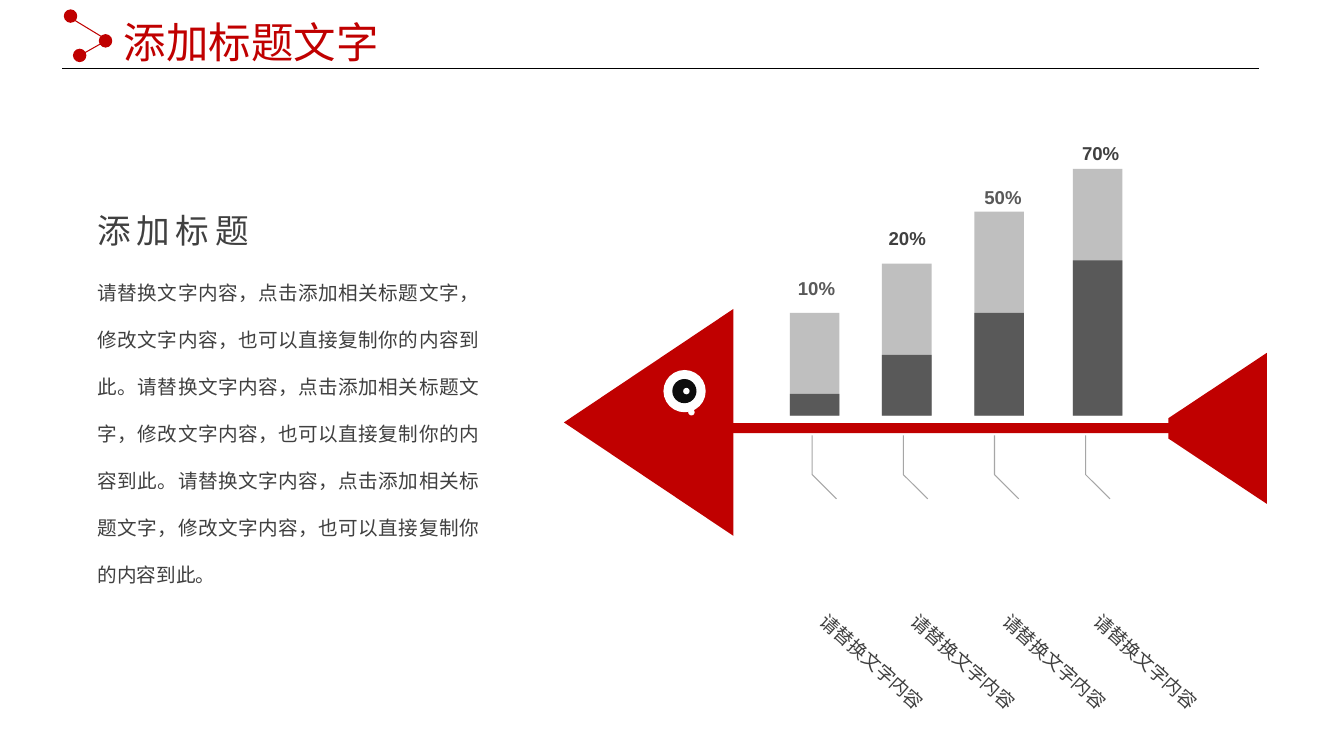
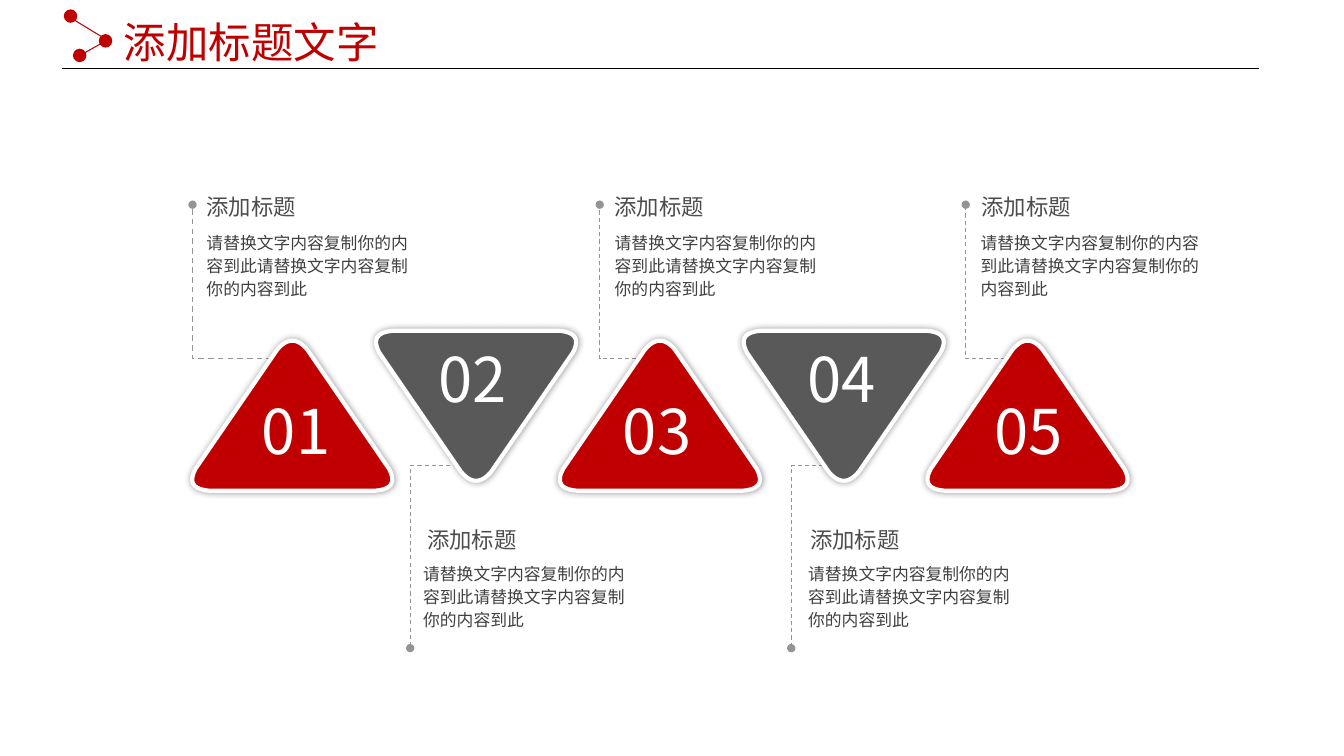
from dataclasses import dataclass

from lxml import etree
from pptx import Presentation
from pptx.dml.color import RGBColor
from pptx.enum.dml import MSO_LINE
from pptx.enum.shapes import MSO_CONNECTOR, MSO_SHAPE as SHAPE
from pptx.enum.text import MSO_AUTO_SIZE as AUTO, PP_ALIGN as ALIGN
from pptx.oxml.ns import qn
from pptx.util import Pt

CJK, LATIN = "Noto Sans CJK SC", "Arial"
RED, WHITE, BLACK = "C00000", "FFFFFF", "000000"
DARK, TEXT, HEADING = "595959", "404040", "4D4D4D"
LIGHT, LEADER, DASH, PUPIL = "BFBFBF", "A6A6A6", "949494", "0D0D0D"
HEADING_TEXT = "添加标题"
SENTENCE = "请替换文字内容，点击添加相关标题文字，修改文字内容，也可以直接复制你的内容到此。"
STEP_TEXT = "请替换文字内容复制你的内容到此" * 2
Point = tuple[float, float]


@dataclass(frozen=True)
class Style:
    size: float
    color: str = TEXT
    font: str = CJK
    bold: bool = False
    align: ALIGN = ALIGN.LEFT
    leading: float = 1.0
    tracking: float = 0
    wrap: bool = True


TITLE = Style(30.3, RED, leading=1.2)
BIG_HEADING = Style(24, tracking=4)
BODY = Style(14, align=ALIGN.JUSTIFY, leading=2)
BONE_LABEL = Style(13.3, align=ALIGN.CENTER, leading=1.2)
STEP_HEADING = Style(16, HEADING, wrap=False)
STEP_BODY = Style(12, leading=1.14)
NUMBER = Style(44, WHITE, wrap=False)


@dataclass(frozen=True)
class Bar:
    left: float
    top: float
    split: float
    label: str
    label_left: float
    label_top: float
    label_color: str


BARS = [
    Bar(564.2, 223.6, 281.3, "10%", 556.6, 190.8, DARK),
    Bar(630, 188.3, 253.5, "20%", 621.4, 155.5, TEXT),
    Bar(696, 151.2, 223.5, "50%", 689.8, 126, DARK),
    Bar(766.4, 120.7, 186, "70%", 759.6, 94.3, TEXT),
]
BAR_WIDTH, BAR_BOTTOM = 35.4, 296.9


@dataclass(frozen=True)
class Row:
    """Vertical places shared by the steps that point the same way."""
    color: str
    apex: float
    base: float
    number: float
    bend: float
    dot: float
    heading: float
    body: float


UP = Row(RED, 241.2, 350.6, 277.2, 256.3, 146.2, 134.6, 160.6)
DOWN = Row(DARK, 345.6, 236.2, 239.8, 332.6, 463, 372.2, 397.4)


@dataclass(frozen=True)
class Step:
    row: Row
    number_left: float
    leader_start: float
    leader_left: float
    heading_left: float
    body_left: float
    body_width: float = 169.2


STEPS = [
    Step(UP, 180, 203.8, 137.5, 140.4, 140.4),
    Step(DOWN, 306, 339.8, 293, 298.1, 295.2),
    Step(UP, 437.8, 467.3, 428.4, 432, 432),
    Step(DOWN, 569.5, 601.2, 565.2, 571.7, 570.2),
    Step(UP, 703.4, 730.8, 689.8, 694.1, 693.4, 180.7),
]
FIRST_AXIS, STEP_PITCH = 208.8, 131.3


def rgb(color: str) -> RGBColor:
    return RGBColor.from_string(color)


def paint(s, fill: str | None = None, line: str | None = None, width: float = 1) -> None:
    s.shadow.inherit = False
    if fill:
        s.fill.solid()
        s.fill.fore_color.rgb = rgb(fill)
    else:
        s.fill.background()
    if line:
        s.line.color.rgb = rgb(line)
        s.line.width = Pt(width)
    else:
        s.line.fill.background()


def add_shape(slide, kind: SHAPE, left: float, top: float, width: float, height: float,
              fill: str, line: str | None = None):
    s = slide.shapes.add_shape(kind, Pt(left), Pt(top), Pt(width), Pt(height))
    paint(s, fill, line)
    return s


def add_dot(slide, x: float, y: float, size: float, fill: str, line: str | None = None) -> None:
    """Circle centred on x, y."""
    add_shape(slide, SHAPE.OVAL, x - size / 2, y - size / 2, size, size, fill, line)


def add_line(slide, start: Point, end: Point, color: str, width: float) -> None:
    ends = [Pt(v) for v in (*start, *end)]
    s = slide.shapes.add_connector(MSO_CONNECTOR.STRAIGHT, *ends)
    s.line.color.rgb = rgb(color)
    s.line.width = Pt(width)
    etree.SubElement(s._element.spPr, qn("a:effectLst"))


def add_outline(slide, points: list[Point], closed: bool = True):
    first, *rest = [(Pt(x), Pt(y)) for x, y in points]
    builder = slide.shapes.build_freeform(*first)
    builder.add_line_segments(rest, close=closed)
    return builder.convert_to_shape()


def add_text(slide, left: float, top: float, width: float, height: float,
             text: str, style: Style, color: str | None = None, rotation: float = 0) -> None:
    s = slide.shapes.add_textbox(Pt(left), Pt(top), Pt(width), Pt(height))
    s.rotation = rotation
    tf = s.text_frame
    tf.word_wrap = style.wrap
    tf.auto_size = AUTO.NONE if rotation else AUTO.SHAPE_TO_FIT_TEXT
    p = tf.paragraphs[0]
    p.alignment = style.align
    p.line_spacing = style.leading
    r = p.add_run()
    r.text = text
    r.font.size = Pt(style.size)
    r.font.bold = style.bold
    r.font.color.rgb = rgb(color or style.color)
    r.font.name = style.font
    rpr = r._r.get_or_add_rPr()
    etree.SubElement(rpr, qn("a:ea")).set("typeface", style.font)
    if style.tracking:
        rpr.set("spc", str(round(style.tracking * 100)))


def add_header(slide) -> None:
    add_line(slide, (44.6, 49), (899.3, 49), BLACK, 0.5)
    for x, y in [(50.4, 11.5), (56.9, 39.6), (75.4, 29.2)]:
        add_dot(slide, x, y, 8.6, RED, RED)
    add_line(slide, (46.1, 10.1), (79.2, 30.2), RED, 0.75)
    add_line(slide, (53.3, 41.8), (76.3, 28.8), RED, 0.75)
    add_text(slide, 81.4, 0.7, 216, 51.1, "添加标题文字", TITLE)


def add_fish(slide) -> None:
    head = add_shape(slide, SHAPE.ISOSCELES_TRIANGLE, 382.3, 241.2, 162, 121, RED)
    head.rotation = 270
    add_dot(slide, 489, 279.4, 30.2, WHITE)
    add_dot(slide, 488.9, 279.4, 17.3, PUPIL)
    for x, y in [(493.9, 294.5), (490.3, 279.4)]:
        add_dot(slide, x, y, 4.6, WHITE)
    add_shape(slide, SHAPE.RECTANGLE, 518.4, 302.2, 338.4, 7.3, RED)
    tail = add_outline(slide, [(905, 252), (905, 360), (834.5, 313.2), (834.5, 298.8)])
    paint(tail, RED)


def add_bar(slide, bar: Bar) -> None:
    for top, color in [(bar.top, LIGHT), (bar.split, DARK)]:
        add_shape(slide, SHAPE.RECTANGLE, bar.left, top, BAR_WIDTH, BAR_BOTTOM - top, color)
    add_text(slide, bar.label_left, bar.label_top, 53.3, 26.6, bar.label,
             Style(13.3, font=LATIN, bold=True, align=ALIGN.CENTER, leading=1.2),
             bar.label_color)


def add_bone(slide, index: int) -> None:
    shift = 65.1 * index
    x = 580.2 + shift
    bone = add_outline(slide, [(x, 311), (x, 339.1), (x + 17.4, 356.4)], closed=False)
    paint(bone, line=LEADER, width=0.75)
    add_text(slide, 565.7 + shift, 458.2, 116.6, 26.6, "请替换文字内容", BONE_LABEL,
             rotation=41.9)


def curve(a: Point, b: Point, c: Point, d: Point, parts: int = 12) -> list[Point]:
    """Points along a cubic Bézier curve."""
    points = []
    for i in range(parts + 1):
        t = i / parts
        weights = ((1 - t) ** 3, 3 * t * (1 - t) ** 2, 3 * t * t * (1 - t), t ** 3)
        x, y = (sum(w * v for w, v in zip(weights, axis)) for axis in zip(a, b, c, d))
        points.append((x, y))
    return points


def add_rounded_triangle(slide, axis: float, row: Row) -> None:
    corner = curve((69.1, 93.6), (74.5, 103.7), (70.6, 108.7), (58.3, 109.4))
    mirrored = [(-x, y) for x, y in reversed(corner)]
    tip = curve((-10.8, 8.6), (-3.6, 0), (3.6, 0), (10.8, 8.6))
    toward_base = 1 if row.base > row.apex else -1
    s = add_outline(slide, [(axis + x, row.apex + toward_base * y)
                            for x, y in corner + mirrored + tip])
    paint(s, row.color, WHITE, 3)
    effects = s._element.spPr.find(qn("a:effectLst"))
    shadow = etree.SubElement(effects, qn("a:outerShdw"), blurRad=str(Pt(5)), dist="0",
                              dir="0", algn="ctr", rotWithShape="0")
    color = etree.SubElement(shadow, qn("a:srgbClr"), val=BLACK)
    etree.SubElement(color, qn("a:alpha"), val="40000")


def add_leader(slide, step: Step) -> None:
    row, x = step.row, step.leader_left
    s = add_outline(slide, [(step.leader_start, row.bend), (x, row.bend), (x, row.dot)],
                    closed=False)
    paint(s, line=DASH, width=1 if step is STEPS[0] else 0.75)
    s.line.dash_style = MSO_LINE.DASH
    for end in ("a:headEnd", "a:tailEnd"):
        etree.SubElement(s.line._get_or_add_ln(), qn(end), type="oval")


def add_step(slide, index: int, step: Step) -> None:
    row = step.row
    add_rounded_triangle(slide, FIRST_AXIS + STEP_PITCH * index, row)
    add_text(slide, step.number_left, row.number, 66.2, 60.5, f"{index + 1:02}", NUMBER)
    add_text(slide, step.body_left, row.body, step.body_width, 56.9, STEP_TEXT, STEP_BODY)
    add_text(slide, step.heading_left, row.heading, 79.2, 26.6, HEADING_TEXT, STEP_HEADING)


def build_fish_slide(slide) -> None:
    add_fish(slide)
    for index, bar in enumerate(BARS):
        add_bar(slide, bar)
        add_bone(slide, index)
    add_text(slide, 62.6, 180, 286.6, 244.8, SENTENCE * 3, BODY)
    add_text(slide, 62.6, 146.2, 144, 36, HEADING_TEXT, BIG_HEADING)


def build_steps_slide(slide) -> None:
    for step in STEPS:
        add_leader(slide, step)
    for index, step in enumerate(STEPS):
        add_step(slide, index, step)


def main() -> None:
    prs = Presentation()
    prs.slide_width, prs.slide_height = Pt(960), Pt(540)
    for build in (build_fish_slide, build_steps_slide):
        slide = prs.slides.add_slide(prs.slide_layouts[6])
        add_header(slide)
        build(slide)
    prs.save("out.pptx")


if __name__ == "__main__":
    main()
